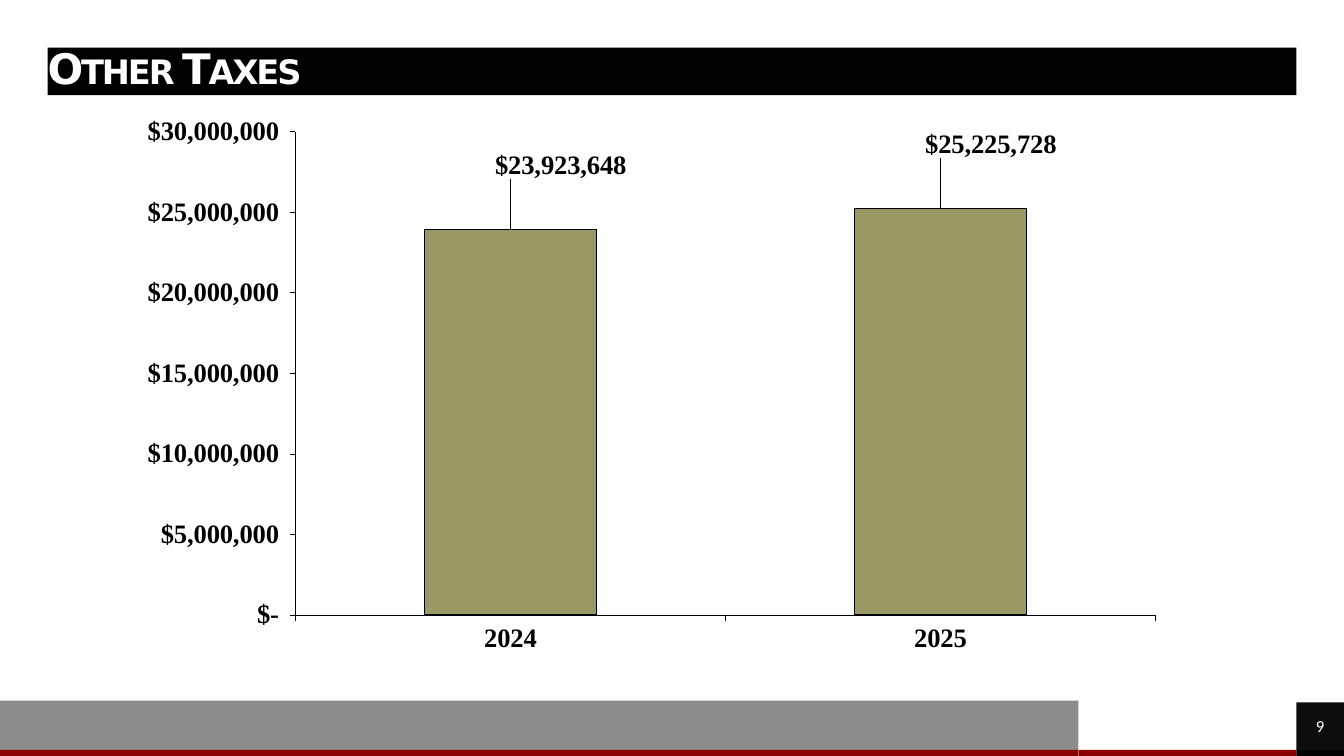
from lxml import etree
from pptx import Presentation
from pptx.chart.data import CategoryChartData
from pptx.dml.color import RGBColor
from pptx.enum.chart import XL_CHART_TYPE, XL_LABEL_POSITION, XL_TICK_LABEL_POSITION, XL_TICK_MARK
from pptx.enum.shapes import MSO_SHAPE
from pptx.enum.text import MSO_ANCHOR, PP_ALIGN
from pptx.oxml.ns import qn
from pptx.util import Pt

RECT = MSO_SHAPE.RECTANGLE
COLUMN = XL_CHART_TYPE.COLUMN_CLUSTERED
ABOVE = XL_LABEL_POSITION.OUTSIDE_END
LOW = XL_TICK_LABEL_POSITION.LOW
OUT, NONE = XL_TICK_MARK.OUTSIDE, XL_TICK_MARK.NONE
MIDDLE = MSO_ANCHOR.MIDDLE
LEFT, CENTER = PP_ALIGN.LEFT, PP_ALIGN.CENTER

COLORS = {"black": "000000", "ink": "0D0D0D", "white": "FFFFFF",
          "red": "8A0000", "gray": "8C8C8C", "olive": "999966"}
MONEY = '"$"#,##0_);"$"(#,##0);"$-"_)'
WIDE, HIGH = 960, 540
SIDE = 34
EDGE = WIDE - SIDE
SPLIT = 770.4
STRIP = 535.7
BAND = 500.4


def color(name):
    return RGBColor.from_string(COLORS[name])


def assign(item, values):
    for name, value in values.items():
        setattr(item, name, value)


def layout(values):
    root = etree.Element(qn("c:layout"))
    manual = etree.SubElement(root, qn("c:manualLayout"))
    for name, value in values.items():
        etree.SubElement(manual, qn("c:" + name)).set("val", str(value))
    return root


class Deck:
    def __init__(self, slide):
        self.slide = slide
        self.chart_font = {"name": "Times New Roman", "size": Pt(19), "bold": True}

    def font(self, font, values, tint):
        assign(font, values)
        font.color.rgb = color(tint)

    def line(self, line, width):
        line.color.rgb = color("black")
        line.width = Pt(width)

    def box(self, left, top, width, height, fill):
        shape = self.slide.shapes.add_shape(RECT, Pt(left), Pt(top), Pt(width), Pt(height))
        shape.shadow.inherit = False
        shape.fill.solid()
        shape.fill.fore_color.rgb = color(fill)
        shape.line.fill.background()
        return shape

    def text(self, shape, words, style, align, spacing=1.0, extra=None):
        frame = shape.text_frame
        assign(frame, {"margin_left": 0, "margin_top": 0, "margin_right": 0,
                       "margin_bottom": 0, "vertical_anchor": MIDDLE, "word_wrap": True})
        para = frame.paragraphs[0]
        assign(para, {"alignment": align, "line_spacing": spacing})
        run = para.add_run()
        run.text = words
        self.font(run.font, style, "white")
        for name, value in (extra or {}).items():
            run.font._element.set(name, value)

    def axis(self, axis, values):
        assign(axis, {"has_major_gridlines": False, "major_tick_mark": OUT,
                      "minor_tick_mark": NONE, **values})
        self.font(axis.tick_labels.font, self.chart_font, "black")
        self.line(axis.format.line, 0.3)

    def chart(self, left, top, width, height, years, sums):
        data = CategoryChartData(number_format=MONEY)
        data.categories = years
        data.add_series("Series 1", sums)
        frame = self.slide.shapes.add_chart(COLUMN, Pt(left), Pt(top), Pt(width), Pt(height), data)
        chart = frame.chart
        assign(chart, {"has_legend": False, "has_title": False})
        self.font(chart.font, {**self.chart_font, "size": Pt(21.6)}, "black")
        self.axis(chart.category_axis, {"tick_label_position": LOW})
        self.axis(chart.value_axis, {"minimum_scale": 0, "maximum_scale": 30000000,
                                     "major_unit": 5000000})
        assign(chart.value_axis.tick_labels, {"number_format": MONEY,
                                              "number_format_is_linked": False})
        plot = chart.plots[0]
        assign(plot, {"gap_width": 150, "vary_by_categories": False})
        bars = plot.series[0]
        bars.format.fill.solid()
        bars.format.fill.fore_color.rgb = color("olive")
        self.line(bars.format.line, 1.2)
        labels = bars.data_labels
        assign(labels, {"show_value": True, "position": ABOVE, "number_format": MONEY,
                        "number_format_is_linked": False})
        self.font(labels.font, self.chart_font, "black")
        for spot in range(len(sums)):
            label = bars.points[spot].data_label
            self.font(label.font, self.chart_font, "black")
            label.position = ABOVE
        for node in labels._element.findall(qn("c:dLbl")):
            node.insert(1, layout({"x": 0.05, "y": -0.08}))
        area = chart._chartSpace.chart.plotArea
        for node in area.findall(qn("c:layout")):
            area.remove(node)
        area.insert(0, layout({"layoutTarget": "inner", "xMode": "edge", "yMode": "edge",
                               "x": 0.16, "y": 0.031, "w": 0.802, "h": 0.847}))


def main():
    show = Presentation()
    assign(show, {"slide_width": Pt(WIDE), "slide_height": Pt(HIGH)})
    deck = Deck(show.slides.add_slide(show.slide_layouts[6]))
    deck.box(0, BAND, SPLIT, STRIP - BAND, "gray")
    for left, right, fill in ((0, SPLIT, "red"), (SPLIT, EDGE, "red"), (EDGE, WIDE, "black")):
        deck.box(left, STRIP, right - left, HIGH - STRIP, fill)
    title = deck.box(SIDE, SIDE, EDGE - SIDE, SIDE, "black")
    deck.text(title, "Other Taxes", {"name": "DejaVu Sans", "size": Pt(30), "bold": True},
              LEFT, 0.9, {"cap": "small", "spc": "-150"})
    number = deck.box(EDGE, STRIP - SIDE, SIDE, SIDE, "ink")
    deck.text(number, "9", {"name": "Calibri", "size": Pt(12)}, CENTER)
    deck.chart(88.5, 81.4, 766, 407.5, ("2024", "2025"), (23923648, 25225728))
    show.save("out.pptx")


if __name__ == "__main__":
    main()
